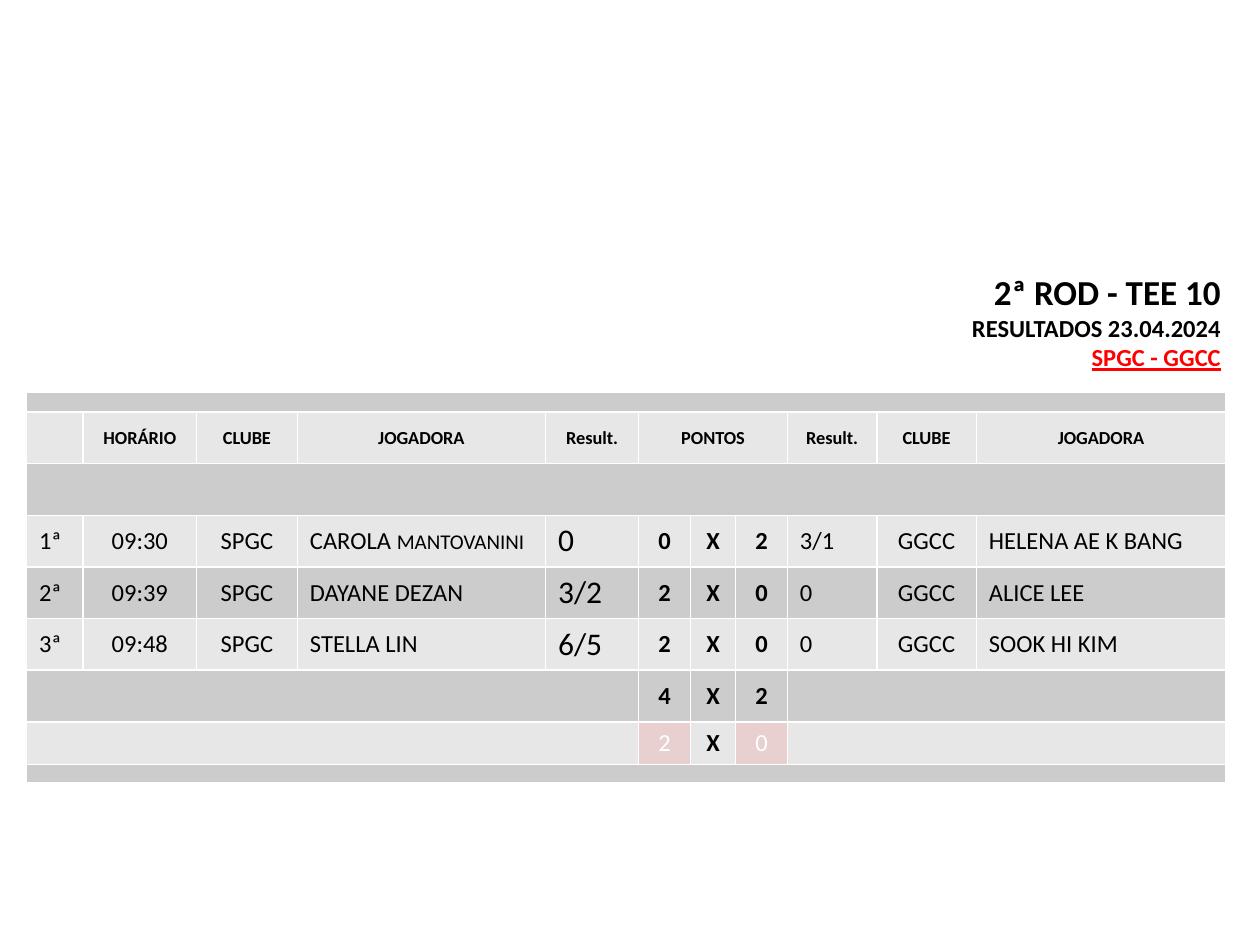
from copy import deepcopy
from lxml import etree
from pptx import Presentation
from pptx import util as u
from pptx.dml.color import RGBColor
from pptx.enum import text
from pptx.oxml import ns

COLORS = {"black": "000000", "white": "FFFFFF", "red": "FF0000",
          "dark": "CCCCCC", "light": "E7E7E7", "pink": "E8D0D0"}


def style(run, size, bold=False, color="black"):
    run.font.name = "Calibri"
    run.font.size = u.Pt(size)
    run.font.bold = bold
    run.font.color.rgb = RGBColor.from_string(COLORS[color])


def add_border(cell, side):
    line = etree.SubElement(cell._tc.get_or_add_tcPr(), ns.qn(f"a:{side}"), w="12700")
    fill = etree.SubElement(line, ns.qn("a:solidFill"))
    etree.SubElement(fill, ns.qn("a:srgbClr"), val=COLORS["white"])


prs = Presentation()
prs.slide_width, prs.slide_height = u.Inches(10), u.Inches(7.5)
slide = prs.slides.add_slide(prs.slide_layouts[5])

heading = slide.shapes.title
heading.left, heading.top = u.Inches(0.72), u.Inches(2.1)
heading.width, heading.height = u.Inches(9.07), u.Inches(1.09)
frame = heading.text_frame
frame.text = "2ª ROD - TEE 10\vRESULTADOS 23.04.2024\nSPGC - GGCC"
frame.word_wrap = True
frame.auto_size = text.MSO_AUTO_SIZE.NONE
frame.vertical_anchor = text.MSO_ANCHOR.TOP
round_line, clubs_line = frame.paragraphs
for line in frame.paragraphs:
    line.alignment = text.PP_ALIGN.RIGHT
style(round_line.runs[0], 20, True)
style(round_line.runs[1], 14, True)
style(clubs_line.runs[0], 14, True, "red")
clubs_line.runs[0].font.underline = True
line_break = round_line._p.find(ns.qn("a:br"))
line_break.append(deepcopy(round_line.runs[0]._r.rPr))

rows = [
    [""] * 11,
    ["", "HORÁRIO", "CLUBE", "JOGADORA", "Result.", "PONTOS", "", "", "Result.", "CLUBE", "JOGADORA"],
    [""] * 11,
    ["1ª", "09:30", "SPGC", "CAROLA ", "0", "0", "X", "2", "3/1", "GGCC", "HELENA AE K BANG"],
    ["2ª", "09:39", "SPGC", "DAYANE DEZAN", "3/2", "2", "X", "0", "0", "GGCC", "ALICE LEE"],
    ["3ª", "09:48", "SPGC", "STELLA LIN", "6/5", "2", "X", "0", "0", "GGCC", "SOOK HI KIM"],
    [""] * 5 + ["4", "X", "2"] + [""] * 3,
    [""] * 5 + ["2", "X", "0"] + [""] * 3,
    [""] * 11,
]
widths = [0.45, 0.9, 0.8, 1.97, 0.74, 0.41, 0.36, 0.41, 0.71, 0.79, 1.98]
heights = [0.16] + [0.41] * 6 + [0.33, 0.15]
HEADER, FINAL = 1, 7
LEFT_COLUMNS = (0, 3, 4, 8, 10)
HOME_RESULT, POINTS = 4, (5, 6, 7)

results = slide.shapes.add_table(len(rows), len(widths), u.Inches(0.21), u.Inches(3.11),
                                 u.Inches(sum(widths)), u.Inches(sum(heights))).table
results.first_row = results.horz_banding = False
for column, width in zip(results.columns, widths):
    column.width = u.Inches(width)
for row, height in zip(results.rows, heights):
    row.height = u.Inches(height)

for r, values in enumerate(rows):
    for c, value in enumerate(values):
        cell = results.cell(r, c)
        for side in ("lnL", "lnR", "lnT", "lnB"):
            add_border(cell, side)
        final_score = r == FINAL and c in (5, 7)
        shade = "pink" if final_score else "light" if r % 2 else "dark"
        cell.fill.solid()
        cell.fill.fore_color.rgb = RGBColor.from_string(COLORS[shade])
        cell.vertical_anchor = text.MSO_ANCHOR.MIDDLE
        entry = cell.text_frame.paragraphs[0]
        if not value:
            entry._p.get_or_add_endParaRPr().set("sz", "100")
            continue
        entry.text = value
        centred = r == HEADER or c not in LEFT_COLUMNS
        entry.alignment = text.PP_ALIGN.CENTER if centred else text.PP_ALIGN.LEFT
        size = 10.5 if r == HEADER else 18 if c == HOME_RESULT else 14
        bold = r == HEADER or (c in POINTS and not final_score)
        style(entry.runs[0], size, bold, "white" if final_score else "black")

surname = results.cell(3, 3).text_frame.paragraphs[0].add_run()
surname.text = "MANTOVANINI"
style(surname, 12)

spans = [(r, 0, 10) for r in (0, 2, 8)] + [(HEADER, 5, 7)]
spans += [(r, first, last) for r in (6, FINAL) for first, last in ((0, 4), (8, 10))]
for r, first, last in spans:
    results.cell(r, first).merge(results.cell(r, last))

prs.save("out.pptx")
